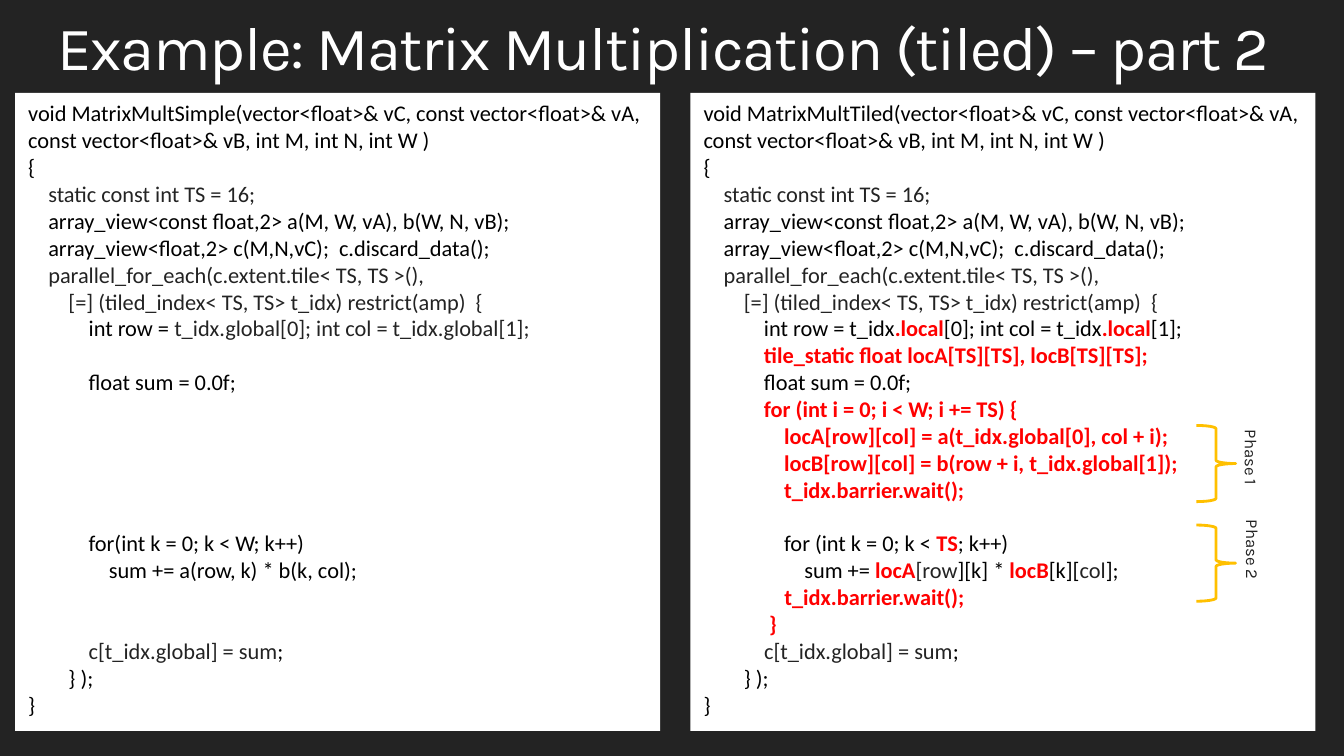
from dataclasses import dataclass

import pptx
import pptx.dml.color
import pptx.enum.shapes
import pptx.enum.text
import pptx.util
from pptx.dml.color import RGBColor
from pptx.util import Cm, Pt

DARK = RGBColor(0x23, 0x23, 0x23)
WHITE = RGBColor(0xFF, 0xFF, 0xFF)
BLACK = RGBColor(0, 0, 0)
RED = RGBColor(0xFF, 0, 0)
AMBER = RGBColor(0xFF, 0xC0, 0)
LINE_HEIGHT = 19.2  # points per line of 16 pt code

# In the code, |...| marks a bold red run and ~...~ a dark grey one.
PARAMETERS = "(vector<float>& vC, const vector<float>& vA, const vector<float>& vB, int M, int N, int W )"

SETUP = """\
{
    ~static const int TS = 16;~
    array_view<const float,2> a(M, W, vA), b(W, N, vB);
    array_view<float,2> c(M,N,vC);  c.discard_data();
    ~parallel_for_each(c.extent.tile< TS, TS >(),~
~        [=] (tiled_index< TS, TS> t_idx) restrict(amp)  {~"""

SIMPLE_LOOP = """\
            int row = ~t_idx.global[0]; int col = t_idx.global[1];~

            float sum = 0.0f;





            for(int k = 0; k < W; k++)
                sum += a(row, k) * b(k, col);

"""

TILED_LOOP = """\
            int row = t_idx|.local|[0]; int col = t_idx|.local|[1];
|            tile_static float locA[TS][TS], locB[TS][TS];|
            float sum = 0.0f;
|            for (int i = 0; i < W; i += TS) {|
|                locA[row][col] = a(t_idx.global[0], col + i);|
|                locB[row][col] = b(row + i, t_idx.global[1]);|
|                t_idx.barrier.wait();|

                for (int k = 0; k < |TS|; k++)
                    sum += |locA|~[row~][k] * |locB|[k][~col~];
                |t_idx.barrier.wait();|
             |}|"""

ENDING = """\
            ~c[t_idx.global] = sum~;
        } );
}"""


@dataclass
class CodePanel:
    left: float
    width: float
    function: str
    loop: str


@dataclass
class Phase:
    text: str
    brace_top: float
    label_left: float
    label_top: float
    label_width: float


PANELS = [
    CodePanel(0.38, 16.26, "void MatrixMultSimple", SIMPLE_LOOP),
    CodePanel(17.4, 15.75, "void MatrixMultTiled", TILED_LOOP),
]
PHASES = [
    Phase("Phase 1", 10.72, 30.23, 11.51, 2.62),
    Phase("Phase 2", 13.23, 30.3, 13.74, 2.54),
]


def add_code_line(p, line: str) -> None:
    p.alignment = pptx.enum.text.PP_ALIGN.LEFT
    p.font.name = "Calibri"
    p.font.size = Pt(16)
    for i, part in enumerate(line.split("|")):
        for j, text in enumerate(part.split("~")):
            if text:
                r = p.add_run()
                r.text = text
                r.font.bold = i % 2 == 1
                r.font.color.rgb = RED if i % 2 else DARK if j % 2 else BLACK


def add_panel(s, panel: CodePanel) -> None:
    sp = s.shapes.add_shape(pptx.enum.shapes.MSO_SHAPE.RECTANGLE,
                            Cm(panel.left), Cm(2.34), Cm(panel.width), Cm(16.08))
    sp.shadow.inherit = False
    sp.fill.solid()
    sp.fill.fore_color.rgb = WHITE
    sp.line.fill.background()
    tf = sp.text_frame
    tf.word_wrap = True
    tf.vertical_anchor = pptx.enum.text.MSO_ANCHOR.TOP
    tf.margin_left = tf.margin_right = Cm(0.33)
    tf.margin_top = tf.margin_bottom = Cm(0.17)
    add_code_line(tf.paragraphs[0], panel.function + PARAMETERS)
    skipped = 0
    for line in "\n".join([SETUP, panel.loop, ENDING]).splitlines():
        if not line:
            skipped += 1
            continue
        p = tf.add_paragraph()
        if skipped:
            p.space_before = Pt(skipped * LINE_HEIGHT)
            skipped = 0
        add_code_line(p, line)


def add_phase(s, phase: Phase) -> None:
    brace = s.shapes.add_shape(pptx.enum.shapes.MSO_SHAPE.LEFT_BRACE,
                               Cm(30.15), Cm(phase.brace_top), Cm(0.99), Cm(1.92))
    brace.rotation = 180
    brace.shadow.inherit = False
    brace.fill.background()
    brace.line.color.rgb = AMBER
    brace.line.width = Pt(2)

    label = s.shapes.add_textbox(Cm(phase.label_left), Cm(phase.label_top),
                                 Cm(phase.label_width), Cm(0.76))
    label.rotation = 90
    label.text_frame.word_wrap = True
    p = label.text_frame.paragraphs[0]
    p.text = phase.text
    p.font.name = "Karla"
    p.font.size = Pt(12)
    p.font.color.rgb = DARK


def add_title(s, text: str) -> None:
    sp = s.shapes.title
    sp.left, sp.top, sp.width, sp.height = Cm(1.45), Cm(0.43), Cm(30.96), Cm(1.7)
    tf = sp.text_frame
    tf.word_wrap = True
    tf.auto_size = pptx.enum.text.MSO_AUTO_SIZE.NONE
    tf.vertical_anchor = pptx.enum.text.MSO_ANCHOR.TOP
    tf.margin_left = tf.margin_right = tf.margin_top = tf.margin_bottom = 0
    p = tf.paragraphs[0]
    p.alignment = pptx.enum.text.PP_ALIGN.LEFT
    p.line_spacing = 0.9
    r = p.add_run()
    r.text = text
    p.font.name = "Karla"
    p.font.size = Pt(44)
    p.font.color.rgb = WHITE
    r._r.get_or_add_rPr().set("spc", "-100")


def main() -> None:
    prs = pptx.Presentation()
    prs.slide_width, prs.slide_height = Cm(33.87), Cm(19.05)
    s = prs.slides.add_slide(prs.slide_layouts[5])
    s.background.fill.solid()
    s.background.fill.fore_color.rgb = DARK

    # Title
    add_title(s, "Example: Matrix Multiplication (tiled) – part 2")
    # Code side by side
    for panel in PANELS:
        add_panel(s, panel)
    # Phases of the tiled version
    for phase in PHASES:
        add_phase(s, phase)
    prs.save("out.pptx")


if __name__ == "__main__":
    main()
